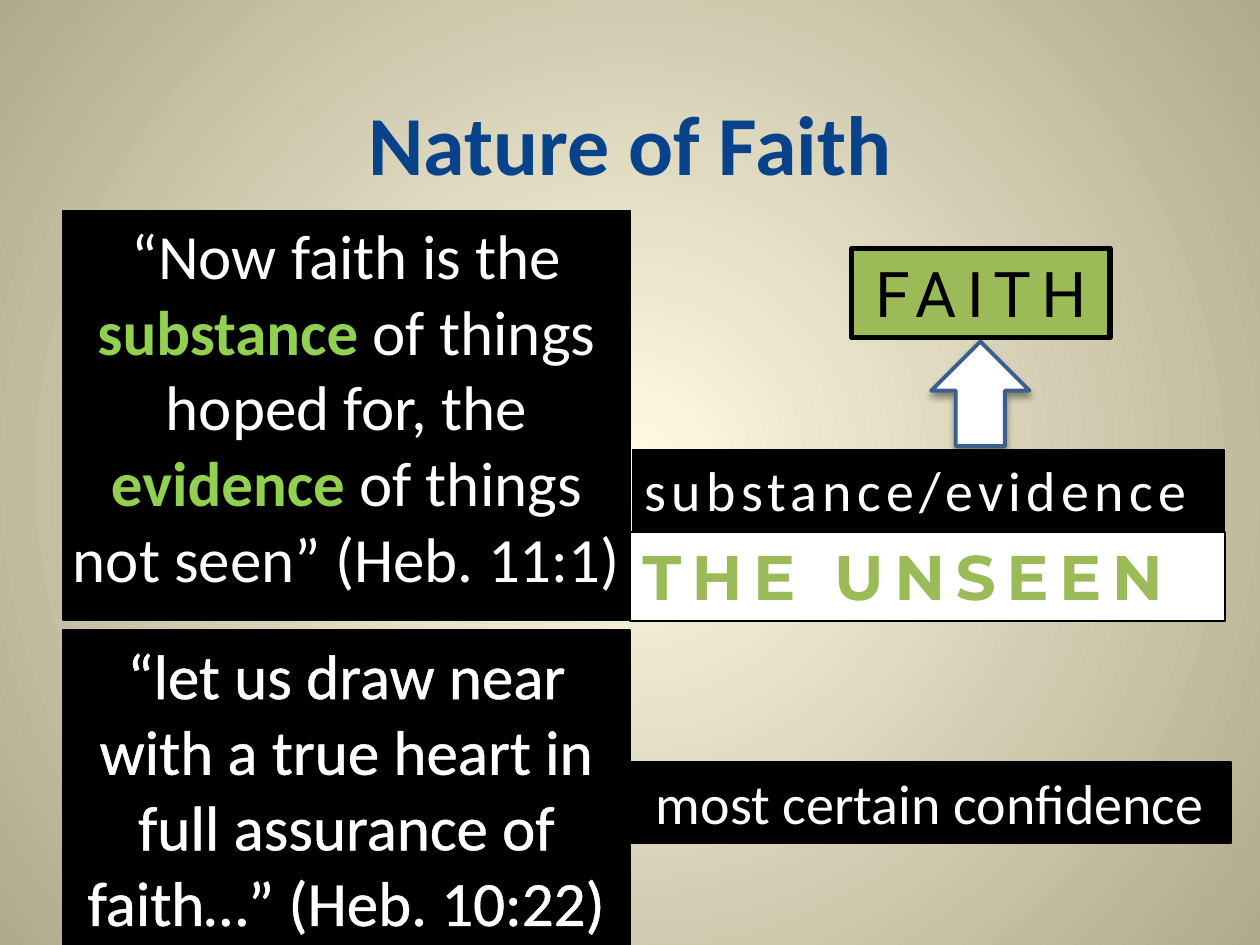
from dataclasses import dataclass
from typing import Optional

from lxml.etree import SubElement
from pptx import Presentation
from pptx.dml.color import RGBColor
from pptx.enum.shapes import MSO_SHAPE
from pptx.enum.text import MSO_ANCHOR, MSO_AUTO_SIZE, PP_ALIGN
from pptx.oxml import parse_xml
from pptx.oxml.ns import qn
from pptx.util import Inches, Pt

DRAWING_NS = 'xmlns:a="http://schemas.openxmlformats.org/drawingml/2006/main"'


@dataclass(frozen=True)
class Theme:
    center: str = "FFFBE5"
    edge: str = "B0AA8B"
    title: str = "07428A"
    black: str = "000000"
    white: str = "FFFFFF"
    green: str = "9BBB59"
    highlight: str = "92D050"
    highlight_outline: str = "054697"
    arrow_line: str = "3A5F8C"
    font: str = "Calibri"
    title_size: int = 48
    quote_size: int = 36
    label_size: int = 32


THEME = Theme()


@dataclass(frozen=True)
class Span:
    text: str
    color: str = THEME.white
    size: int = THEME.quote_size
    font: str = THEME.font
    bold: bool = False
    spacing: int = 0
    outline: Optional[tuple[str, float]] = None


@dataclass(frozen=True)
class Label:
    left: float
    top: float
    width: float
    height: float
    span: Span
    fill: str = THEME.black
    line_width: int = 1
    align: PP_ALIGN = PP_ALIGN.LEFT


def rgb(color: str) -> RGBColor:
    return RGBColor.from_string(color)


def place(shape, left: float, top: float, width: float, height: float) -> None:
    shape.left, shape.top = Inches(left), Inches(top)
    shape.width, shape.height = Inches(width), Inches(height)


def paint(shape, fill: str, line: str, line_width: float) -> None:
    shape.fill.solid()
    shape.fill.fore_color.rgb = rgb(fill)
    shape.line.color.rgb = rgb(line)
    shape.line.width = Pt(line_width)


def write(box, spans: list[Span], align: PP_ALIGN) -> None:
    paragraph = box.text_frame.paragraphs[0]
    paragraph.alignment = align
    paragraph.space_before = Pt(0)
    for span in spans:
        run = paragraph.add_run()
        run.text = span.text
        run.font.name = span.font
        run.font.size = Pt(span.size)
        run.font.bold = span.bold
        run.font.color.rgb = rgb(span.color)
        properties = run.font._element
        if span.spacing:
            properties.set("spc", str(span.spacing * 100))
        if span.outline:
            color, width = span.outline
            properties.insert(0, parse_xml(
                f'<a:ln {DRAWING_NS} w="{Pt(width)}"><a:solidFill>'
                f'<a:srgbClr val="{color}"/></a:solidFill></a:ln>'))


def format_quote(box, spans: list[Span]) -> None:
    paint(box, THEME.black, THEME.black, 1)
    frame = box.text_frame
    frame.word_wrap = True
    frame.auto_size = MSO_AUTO_SIZE.NONE
    frame.vertical_anchor = MSO_ANCHOR.TOP
    frame.margin_left = frame.margin_right = Inches(0.05)
    frame.margin_top = frame.margin_bottom = Inches(0.05)
    write(box, spans, PP_ALIGN.CENTER)


def add_label(page, label: Label) -> None:
    box = page.shapes.add_textbox(0, 0, 0, 0)
    place(box, label.left, label.top, label.width, label.height)
    paint(box, label.fill, THEME.black, label.line_width)
    box.text_frame.word_wrap = False
    box.text_frame.auto_size = MSO_AUTO_SIZE.SHAPE_TO_FIT_TEXT
    write(box, [label.span], label.align)


def add_arrow(page) -> None:
    arrow = page.shapes.add_shape(MSO_SHAPE.DOWN_ARROW, Inches(7.39), Inches(2.71),
                                  Inches(0.78), Inches(0.83))
    arrow.rotation = 180
    paint(arrow, THEME.white, THEME.arrow_line, 2.25)
    arrow.shadow.inherit = False
    effects = arrow._element.spPr.find(qn("a:effectLst"))
    effects.append(parse_xml(
        f'<a:outerShdw {DRAWING_NS} blurRad="{Pt(4)}" dist="{Pt(3)}" dir="5400000" '
        f'rotWithShape="0"><a:srgbClr val="{THEME.black}"><a:alpha val="40000"/>'
        '</a:srgbClr></a:outerShdw>'))


def set_background(page) -> None:
    fill = page.background.fill
    fill.gradient()
    for stop, color, position in zip(fill.gradient_stops, (THEME.center, THEME.edge), (0, 1)):
        stop.color.rgb = rgb(color)
        stop.position = position
    # Turn the linear gradient into a circular one around the middle
    gradient = page.background._cSld.find(".//" + qn("a:gradFill"))
    gradient.remove(gradient.find(qn("a:lin")))
    circle = SubElement(gradient, qn("a:path"), {"path": "circle"})
    SubElement(circle, qn("a:fillToRect"), dict.fromkeys("ltrb", "50000"))


def highlighted(text: str) -> Span:
    return Span(text, THEME.highlight, bold=True, outline=(THEME.highlight_outline, 1))


HEBREWS_11 = [
    Span("“Now faith is the "), highlighted("substance "),
    Span("of things hoped for, the "), highlighted("evidence "),
    Span("of things not seen” (Heb. 11:1)"),
]
HEBREWS_10 = [Span("“let us draw near with a true heart in full assurance of faith…” (Heb. 10:22)",
                   outline=(THEME.white, 1.45))]
LABELS = [
    Label(5.02, 3.57, 4.7, 0.64,
          Span("substance/evidence", size=THEME.label_size, spacing=3)),
    Label(4.99, 6.05, 4.78, 0.64,
          Span("most certain confidence", size=THEME.label_size), align=PP_ALIGN.CENTER),
    Label(6.76, 1.97, 2.05, 0.71, Span("FAITH", THEME.black, font="Roboto", spacing=6),
          fill=THEME.green, line_width=3, align=PP_ALIGN.CENTER),
    Label(5, 4.22, 4.72, 0.71,
          Span("THE UNSEEN", THEME.green, font="Montserrat", bold=True, spacing=6,
               outline=(THEME.black, 0.75)), fill=THEME.white),
]


def main() -> None:
    deck = Presentation()
    deck.slide_width, deck.slide_height = Inches(10), Inches(7.5)
    page = deck.slides.add_slide(deck.slide_layouts[1])
    set_background(page)

    # Title
    title = page.shapes.title
    place(title, 0.5, 0.33, 9, 1.25)
    title.text_frame.vertical_anchor = MSO_ANCHOR.BOTTOM
    write(title, [Span("Nature of Faith", THEME.title, THEME.title_size, bold=True)],
          PP_ALIGN.CENTER)

    # Quotations on the left
    body = page.placeholders[1]
    place(body, 0.5, 1.67, 4.5, 3.25)
    format_quote(body, HEBREWS_11)
    properties = body.text_frame.paragraphs[0]._p.get_or_add_pPr()
    properties.set("marL", "0")
    properties.set("indent", "0")
    SubElement(properties, qn("a:buNone"))
    second_quote = page.shapes.add_textbox(Inches(0.5), Inches(5), Inches(4.5), Inches(2.5))
    format_quote(second_quote, HEBREWS_10)

    # Arrow and labels on the right
    add_arrow(page)
    for label in LABELS:
        add_label(page, label)
    deck.save("out.pptx")


if __name__ == "__main__":
    main()
